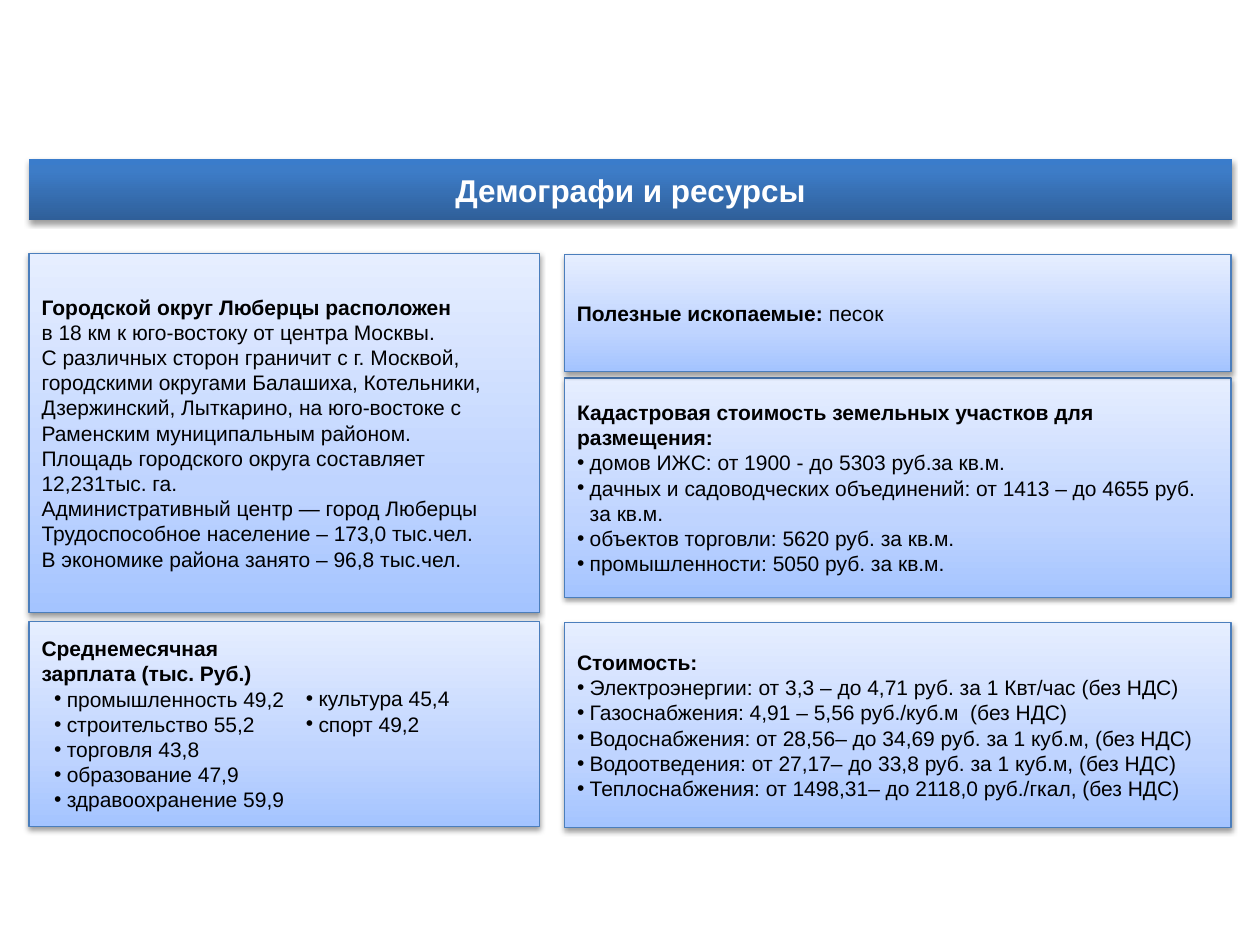
import copy

import pptx
import pptx.util
import pptx.dml.color
import pptx.enum.shapes
import pptx.enum.text
import pptx.oxml.ns
from lxml import etree

Inches, Pt = pptx.util.Inches, pptx.util.Pt

# Content: H = bold heading, T = plain text, B = bulleted, I = indented bullet
TITLE = "Демографи и ресурсы"
LOCATION = [
    ("H", "Городской округ Люберцы расположен"),
    ("T", "в 18 км к юго-востоку от центра Москвы."),
    ("T", "С различных сторон граничит с г. Москвой, городскими округами Балашиха, "
          "Котельники, Дзержинский, Лыткарино, на юго-востоке с Раменским "
          "муниципальным районом."),
    ("T", "Площадь городского округа составляет 12,231тыс. га."),
    ("T", "Административный центр — город Люберцы"),
    ("T", "Трудоспособное население – 173,0 тыс.чел."),
    ("T", "В экономике района занято – 96,8 тыс.чел."),
]
WAGES = [
    ("H", "Среднемесячная зарплата (тыс. Руб.)"),
    ("I", "промышленность 49,2"),
    ("I", "строительство 55,2"),
    ("I", "торговля 43,8"),
    ("I", "образование 47,9"),
    ("I", "здравоохранение 59,9"),
]
MORE_WAGES = [("B", "культура 45,4"), ("B", "спорт 49,2")]
MINERALS = [("H", "Полезные ископаемые: ")]
MINERALS_VALUE = "песок"
LAND = [
    ("H", "Кадастровая стоимость земельных участков для размещения:"),
    ("B", "домов ИЖС: от 1900 - до 5303 руб.за кв.м."),
    ("B", "дачных и садоводческих объединений: от 1413 – до 4655 руб. за кв.м."),
    ("B", "объектов торговли: 5620 руб. за кв.м."),
    ("B", "промышленности: 5050 руб. за кв.м."),
]
UTILITIES = [
    ("H", "Стоимость:"),
    ("B", "Электроэнергии: от 3,3 – до 4,71 руб. за 1 Квт/час (без НДС)"),
    ("B", "Газоснабжения: 4,91 – 5,56 руб./куб.м  (без НДС)"),
    ("B", "Водоснабжения: от 28,56– до 34,69 руб. за 1 куб.м, (без НДС)"),
    ("B", "Водоотведения: от 27,17– до 33,8 руб. за 1 куб.м, (без НДС)"),
    ("B", "Теплоснабжения: от 1498,31– до 2118,0 руб./гкал, (без НДС)"),
]

THEME = {
    "font": "Arial", "title_size": 18, "body_size": 12,
    "title_color": "FFFFFF", "body_color": "000000", "border": "4B7EBC",
    "title_fill": [(0, "2F5F99"), (0.8, "3D7CC7"), (1, "3A7CCB")],
    "box_fill": [(0, "A4C4FF"), (0.35, "BFD4FF"), (1, "E6EEFF")],
}

# Layout: two columns under a full-width title bar
LEFT, LEFT_W = 0.23, 4.05
RIGHT, RIGHT_W = 4.48, 5.29
WAGES_TOP, BOTTOM_H = 4.93, 1.63
LINE_H = 0.2        # height of one line of body text
BULLET = 0.1        # hanging indent of a bullet
INDENTS = {"H": 0, "T": 0, "B": BULLET, "I": 2 * BULLET}


def rgb(value):
    return pptx.dml.color.RGBColor.from_string(value)


def place(sp, left, top, width, height):
    sp.left, sp.top = Inches(left), Inches(top)
    sp.width, sp.height = Inches(width), Inches(height)


def paint(sp, stops, border=None):
    """Vertical three-stop gradient, optional border, soft shadow below."""
    qn = pptx.oxml.ns.qn
    sp.fill.gradient()
    sp.fill.gradient_angle = 90
    gs_list = sp._element.spPr.find(".//" + qn("a:gsLst"))
    gs_list.append(copy.deepcopy(gs_list[-1]))
    for stop, (position, color) in zip(sp.fill.gradient_stops, stops):
        stop.position = position
        stop.color.rgb = rgb(color)
    if border:
        sp.line.color.rgb = rgb(border)
        sp.line.width = Pt(0.75)
    else:
        sp.line.fill.background()
    sp.shadow.inherit = False
    effects = sp._element.spPr.find(qn("a:effectLst"))
    shadow = etree.SubElement(effects, qn("a:outerShdw"), blurRad=str(Pt(3.1)),
                              dist=str(Pt(1.6)), dir="5400000", rotWithShape="0")
    color = etree.SubElement(shadow, qn("a:srgbClr"), val="000000")
    etree.SubElement(color, qn("a:alpha"), val="38000")


def style_run(r, size, color, bold):
    r.font.name, r.font.size, r.font.bold = THEME["font"], Pt(size), bold
    r.font.color.rgb = rgb(color)


def set_frame(tf, anchor=pptx.enum.text.MSO_ANCHOR.MIDDLE):
    tf.word_wrap = True
    tf.auto_size = pptx.enum.text.MSO_AUTO_SIZE.NONE
    tf.vertical_anchor = anchor
    tf.margin_left = tf.margin_right = Inches(0.1)
    tf.margin_top = tf.margin_bottom = Inches(0.05)


def write(tf, items):
    tf.text = "\n".join(text for _, text in items)
    for p, (kind, _) in zip(tf.paragraphs, items):
        p.alignment = pptx.enum.text.PP_ALIGN.LEFT
        p.space_before = Pt(0)
        pPr = p._p.get_or_add_pPr()
        bulleted = kind in "BI"
        pPr.set("marL", str(Inches(INDENTS[kind])))
        pPr.set("indent", str(Inches(-BULLET if bulleted else 0)))
        if bulleted:
            etree.SubElement(pPr, pptx.oxml.ns.qn("a:buFont"), typeface=THEME["font"])
            etree.SubElement(pPr, pptx.oxml.ns.qn("a:buChar"), char="•")
        else:
            etree.SubElement(pPr, pptx.oxml.ns.qn("a:buNone"))
        style_run(p.runs[0], THEME["body_size"], THEME["body_color"], kind == "H")


def main():
    prs = pptx.Presentation()
    prs.slide_width, prs.slide_height = Inches(10), Inches(7.5)
    s = prs.slides.add_slide(prs.slide_layouts.get_by_name("Comparison"))

    # Title bar
    title = s.shapes.title
    place(title, LEFT, 1.26, 9.55, 0.49)
    paint(title, THEME["title_fill"])
    set_frame(title.text_frame)
    title.text_frame.text = TITLE
    p = title.text_frame.paragraphs[0]
    p.alignment = pptx.enum.text.PP_ALIGN.CENTER
    style_run(p.runs[0], THEME["title_size"], THEME["title_color"], True)

    # Text boxes
    minerals = s.shapes.add_shape(pptx.enum.shapes.MSO_SHAPE.RECTANGLE, 0, 0, 0, 0)
    location, wages, land, utilities = [s.placeholders[i] for i in (1, 2, 3, 4)]
    boxes = [
        (location, LOCATION, (LEFT, 2.01, LEFT_W, 2.85)),
        (wages, WAGES, (LEFT, WAGES_TOP, LEFT_W, BOTTOM_H)),
        (minerals, MINERALS, (RIGHT, 2.02, RIGHT_W, 0.93)),
        (land, LAND, (RIGHT, 3, RIGHT_W, 1.74)),
        (utilities, UTILITIES, (RIGHT, 4.94, RIGHT_W, BOTTOM_H)),
    ]
    for sp, items, area in boxes:
        place(sp, *area)
        paint(sp, THEME["box_fill"], THEME["border"])
        set_frame(sp.text_frame)
        write(sp.text_frame, items)

    # Mineral named after its bold label
    r = minerals.text_frame.paragraphs[0].add_run()
    r.text = MINERALS_VALUE
    style_run(r, THEME["body_size"], THEME["body_color"], False)

    # Second column of wages, level with the first bullet
    wages.text_frame.margin_right = Inches(1.95)
    first_line = WAGES_TOP + (BOTTOM_H - 7 * LINE_H) / 2
    more = s.shapes.add_textbox(Inches(2.33), Inches(first_line + 2 * LINE_H - 0.05),
                                Inches(1.9), Inches(2 * LINE_H + 0.1))
    set_frame(more.text_frame, pptx.enum.text.MSO_ANCHOR.TOP)
    write(more.text_frame, MORE_WAGES)

    prs.save("out.pptx")


if __name__ == "__main__":
    main()
